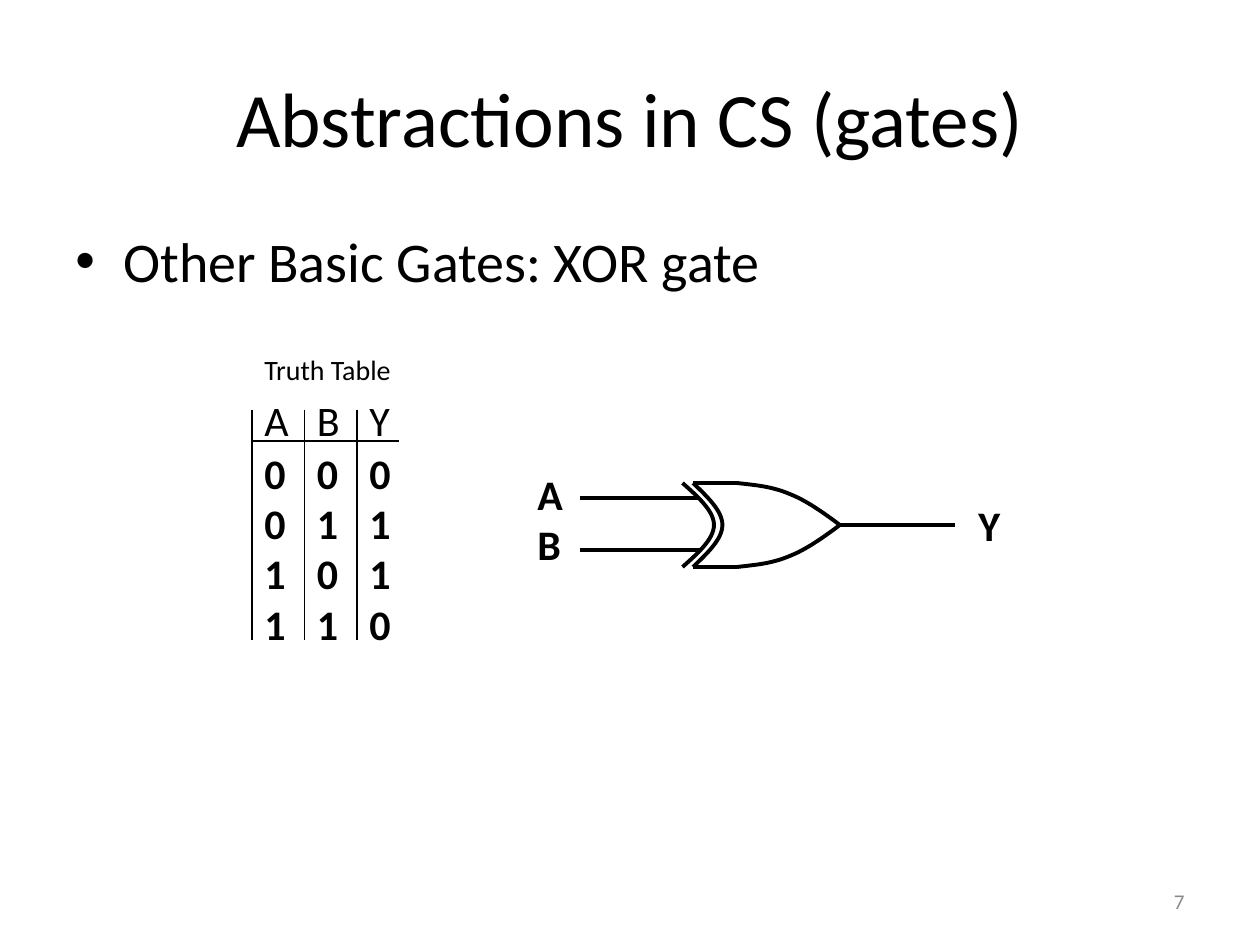
"""Slide on the XOR gate with its truth table and circuit symbol."""
from lxml.etree import SubElement
from pptx import Presentation
from pptx.dml.color import RGBColor
from pptx.enum.shapes import MSO_CONNECTOR
from pptx.enum.text import MSO_ANCHOR, PP_ALIGN
from pptx.oxml.ns import qn
from pptx.util import Inches, Pt

COLORS = {"ink": "000000", "muted": "898989"}
prs = Presentation()
prs.slide_width, prs.slide_height = Inches(10), Inches(7.5)
COL, ROW = prs.slide_width / 120, prs.slide_height / 90
s = prs.slides.add_slide(prs.slide_layouts[6])


def add_text(x, y, w, h, lines, size, bold=False, color="ink", wrap=False,
             align=PP_ALIGN.LEFT, anchor=MSO_ANCHOR.TOP):
    sp = s.shapes.add_textbox(int(x * COL), int(y * ROW), int(w * COL), int(h * ROW))
    tf = sp.text_frame
    tf.word_wrap, tf.vertical_anchor = wrap, anchor
    tf.text = "\n".join(lines)
    for p in tf.paragraphs:
        p.alignment = align
        for r in p.runs:
            for key, value in {"name": "Calibri", "size": Pt(size), "bold": bold}.items():
                setattr(r.font, key, value)
            r.font.color.rgb = RGBColor.from_string(COLORS[color])
    return tf


def add_line(x1, y1, x2, y2, width):
    sp = s.shapes.add_connector(MSO_CONNECTOR.STRAIGHT, int(x1 * COL), int(y1 * ROW),
                                int(x2 * COL), int(y2 * ROW))
    sp.line.width = Pt(width)
    sp.line.color.rgb = RGBColor.from_string(COLORS["ink"])
    SubElement(sp._element.spPr, qn("a:effectLst"))


add_text(86, 83.4, 28, 4.8, ["7"], 12, color="muted", wrap=True,
         align=PP_ALIGN.RIGHT, anchor=MSO_ANCHOR.MIDDLE)
add_text(6, 3.6, 108, 15, ["Abstractions in CS (gates)"], 44, wrap=True,
         align=PP_ALIGN.CENTER, anchor=MSO_ANCHOR.MIDDLE)
p = add_text(6, 21, 108, 59.4, ["Other Basic Gates: XOR gate"], 32, wrap=True).paragraphs[0]
p.space_before = Pt(6.4)
pPr = p._p.get_or_add_pPr()
pPr.set("marL", str(Inches(0.38)))
pPr.set("indent", str(-Inches(0.38)))
SubElement(pPr, qn("a:buFont"), typeface="Arial")
SubElement(pPr, qn("a:buChar"), char="•")

add_text(24, 33, 15.1, 4.4, ["Truth Table"], 16)
for i, (head, bits) in enumerate({"A": "0011", "B": "0101", "Y": "0110"}.items()):
    x = 24 + 5 * i
    add_line(x, 39, x, 61, 0.75)
    add_text(x, 37, 5.3, 6, [head], 24)
    add_text(x, 42, 4.4, 20.4, bits, 24, bold=True)
add_line(24, 42, 38, 42, 0.75)

for x1, y, x2 in [(55.2, 47.4, 66.5), (55.2, 52.4, 66.8), (80, 50, 91),
                  (66, 46, 70.2), (66, 54, 70.2)]:
    add_line(x1, y, x2, y, 2.25)
add_text(50, 44, 5.3, 10.8, "AB", 24, bold=True)
add_text(92, 47, 5.3, 6, "Y", 24, bold=True)

top = [(70.2, 46), (71.9, 46.2), (73.4, 46.3), (75.1, 47), (76.7, 47.6), (78.4, 48.8), (80, 50)]
curves = [top, [(x, 100 - y) for x, y in top]]
for x, bulge in [(66, 2.8), (65, 3)]:
    shares = [0, 0.5, 1, 1, 1, 0.5, 0]
    curves.append([(x + bulge * k, 54 - 8 * i / 6) for i, k in enumerate(shares)])
STEPS = 16
for curve in curves:
    points = [curve[0]]
    for i in (0, 3):
        for t in (n / STEPS for n in range(1, STEPS + 1)):
            weights = [(1 - t) ** 3, 3 * t * (1 - t) ** 2, 3 * t ** 2 * (1 - t), t ** 3]
            points.append([sum(w * c[axis] for w, c in zip(weights, curve[i:i + 4]))
                           for axis in (0, 1)])
    points = [(int(x * COL), int(y * ROW)) for x, y in points]
    fb = s.shapes.build_freeform(*points[0])
    fb.add_line_segments(points[1:], close=False)
    sp = fb.convert_to_shape()
    sp.shadow.inherit = False
    sp.fill.background()
    sp.line.width = Pt(2.25)
    sp.line.color.rgb = RGBColor.from_string(COLORS["ink"])

prs.save("out.pptx")
